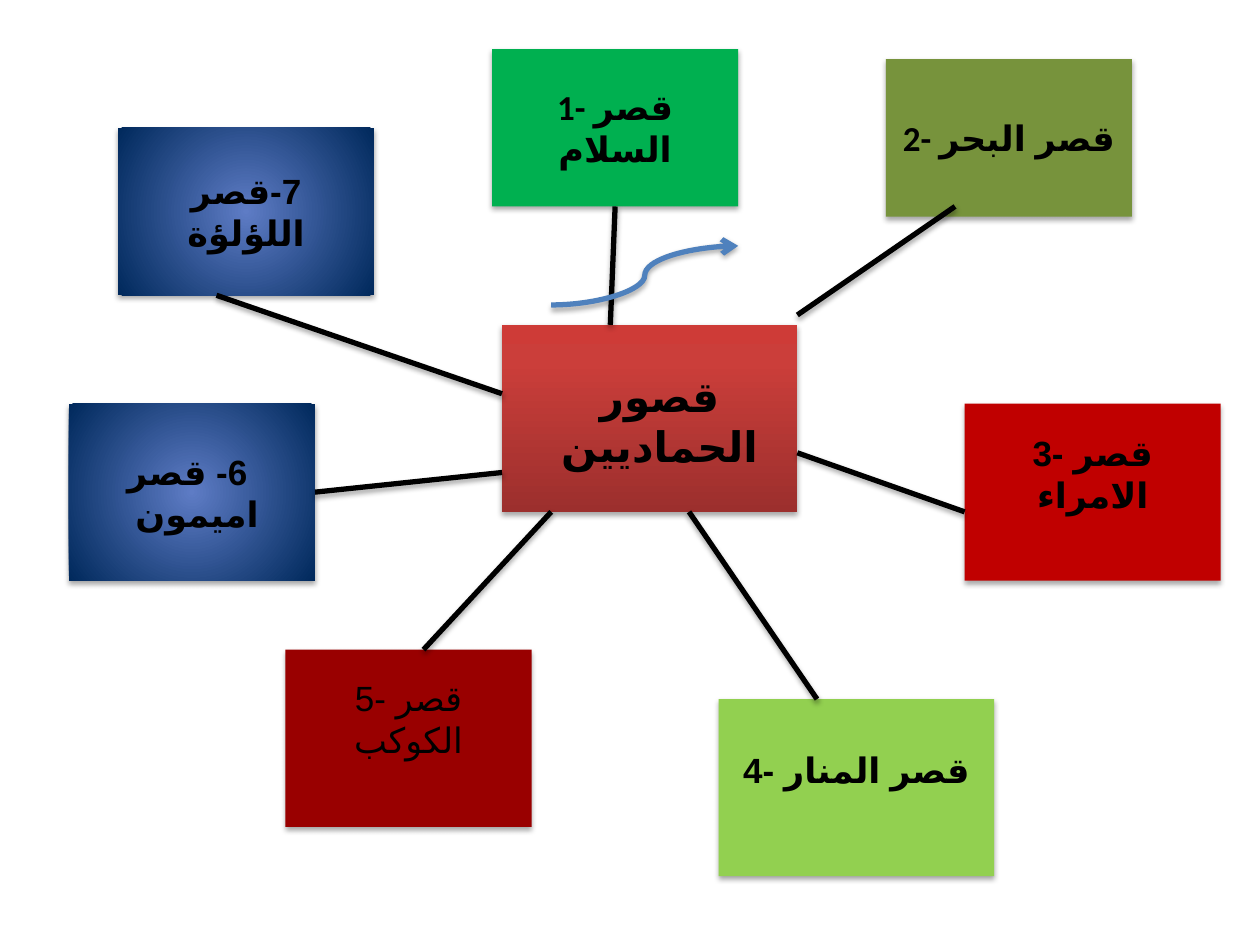
from dataclasses import dataclass

from lxml.etree import SubElement
from pptx import Presentation
from pptx.dml.color import RGBColor
from pptx.enum.shapes import MSO_CONNECTOR, MSO_SHAPE
from pptx.enum.text import MSO_ANCHOR, PP_ALIGN
from pptx.oxml.ns import qn
from pptx.util import Pt


@dataclass(frozen=True)
class Gradient:
    """Stops are (percent, colour); without an angle the gradient is radial."""
    stops: tuple[tuple[int, str], ...]
    angle: int | None = None


@dataclass(frozen=True)
class Theme:
    ink: str = "000000"
    arrow: str = "4F81BD"
    hub: Gradient = Gradient(((0, "9C2F2D"), (80, "CB3E3A"), (100, "CE3B37")), 270)
    blue: Gradient = Gradient(((0, "5E7CC5"), (100, "00295C")))
    arabic_font: str = "Arial"
    language: str = "ar-DZ"
    hub_size: float = 24
    palace_size: float = 20
    line_width: float = 3


@dataclass(frozen=True)
class Box:
    left: float
    top: float
    width: float
    height: float

    def lengths(self) -> tuple[Pt, Pt, Pt, Pt]:
        return Pt(self.left), Pt(self.top), Pt(self.width), Pt(self.height)


@dataclass(frozen=True)
class Palace:
    label: str
    box: Box
    fill: str | Gradient
    font: str = "Arial"
    bold: bool = True
    rtl: bool = False
    lift: float = 0  # extra bottom inset that raises the label


@dataclass(frozen=True)
class Link:
    start: tuple[float, float]
    end: tuple[float, float]


THEME = Theme()
HUB = Box(286.88, 185.63, 168.75, 106.88)
HUB_LABEL = Box(303.75, 208, 146.25, 36)
PALACES = [
    Palace("1- قصر السلام", Box(281.25, 28, 140.5, 90), "00B050", "Calibri"),
    Palace("2- قصر البحر", Box(506.25, 33.75, 140.5, 90), "77933C", "Calibri"),
    Palace("3- قصر الامراء", Box(551.25, 230.63, 146.25, 101.25), "C00000", lift=21),
    Palace("4- قصر المنار", Box(410.63, 399.5, 157.5, 101.25), "92D050", lift=21),
    Palace("5- قصر الكوكب", Box(163.13, 371.25, 140.63, 101.25), "990000", bold=False, lift=23),
    Palace(" 6- قصر اميمون ", Box(39.4, 230.63, 140.63, 101.25), THEME.blue, rtl=True),
    Palace("7-قصر اللؤلؤة", Box(67.5, 73, 146.25, 95.75), THEME.blue, rtl=True),
]
LINKS = [
    Link((348.75, 185.63), (351.5, 118)),
    Link((545.75, 118), (455.63, 180)),
    Link((123.75, 168.75), (286.88, 225)),
    Link((286.88, 270), (180, 281.25)),
    Link((315, 292.5), (242, 371.25)),
    Link((393.75, 292.5), (466.88, 399.5)),
    Link((455.63, 258.75), (551.25, 292.5)),
]
ORDER_ARROW = Link((315, 174.25), (421.88, 140.5))


def add_node(parent, tag: str, **attributes):
    node = SubElement(parent, qn(tag))
    for name, value in attributes.items():
        node.set(name, str(value))
    return node


def add_shadow(shape) -> None:
    """Soft shadow just below the shape; line and fill must already be set."""
    properties = shape.element.spPr
    effects = properties.find(qn("a:effectLst"))
    if effects is None:
        effects = add_node(properties, "a:effectLst")
    shadow = add_node(effects, "a:outerShdw", blurRad=Pt(3.1), dist=Pt(1.8),
                      dir=90 * 60000, rotWithShape=0)
    colour = add_node(shadow, "a:srgbClr", val=THEME.ink)
    add_node(colour, "a:alpha", val=35000)


def fill_gradient(shape, gradient: Gradient) -> None:
    shape.fill.gradient()
    fill = shape.element.spPr.find(qn("a:gradFill"))
    for child in list(fill):
        fill.remove(child)
    stops = add_node(fill, "a:gsLst")
    for percent, colour in gradient.stops:
        stop = add_node(stops, "a:gs", pos=percent * 1000)
        add_node(stop, "a:srgbClr", val=colour)
    if gradient.angle is None:
        radial = add_node(fill, "a:path", path="circle")
        add_node(radial, "a:fillToRect", l=50000, t=50000, r=50000, b=50000)
    else:
        add_node(fill, "a:lin", ang=gradient.angle * 60000, scaled=0)


def add_block(slide, box: Box, fill: str | Gradient):
    block = slide.shapes.add_shape(MSO_SHAPE.RECTANGLE, *box.lengths())
    if isinstance(fill, Gradient):
        fill_gradient(block, fill)
    else:
        block.fill.solid()
        block.fill.fore_color.rgb = RGBColor.from_string(fill)
    block.line.fill.background()
    block.shadow.inherit = False
    add_shadow(block)
    return block


def write_label(frame, label: str, font: str, size: float,
                bold: bool = True, rtl: bool = False) -> None:
    frame.word_wrap = True
    paragraph = frame.paragraphs[0]
    paragraph.alignment = PP_ALIGN.CENTER
    if rtl:
        paragraph._p.get_or_add_pPr().set("rtl", "1")
    run = paragraph.add_run()
    run.text = label
    for name, value in {"name": font, "size": Pt(size), "bold": bold}.items():
        setattr(run.font, name, value)
    run.font.color.rgb = RGBColor.from_string(THEME.ink)
    properties = run._r.get_or_add_rPr()
    properties.set("lang", THEME.language)
    add_node(properties, "a:cs", typeface=THEME.arabic_font)


def add_palace(slide, palace: Palace) -> None:
    frame = add_block(slide, palace.box, palace.fill).text_frame
    frame.vertical_anchor = MSO_ANCHOR.MIDDLE
    frame.margin_bottom = Pt(3.6 + palace.lift)
    write_label(frame, palace.label, palace.font, THEME.palace_size, palace.bold, palace.rtl)


def add_link(slide, link: Link, colour: str, kind=MSO_CONNECTOR.STRAIGHT, arrow: bool = False) -> None:
    connector = slide.shapes.add_connector(kind, *map(Pt, link.start + link.end))
    connector.line.width = Pt(THEME.line_width)
    connector.line.color.rgb = RGBColor.from_string(colour)
    if arrow:
        add_node(connector.element.spPr.find(qn("a:ln")), "a:tailEnd", type="arrow")
    add_shadow(connector)


def main() -> None:
    deck = Presentation()
    deck.slide_width, deck.slide_height = Pt(720), Pt(540)
    slide = deck.slides.add_slide(deck.slide_layouts.get_by_name("Blank"))

    add_block(slide, HUB, THEME.hub)
    hub_label = slide.shapes.add_textbox(*HUB_LABEL.lengths())
    write_label(hub_label.text_frame, "قصور الحماديين", "Calibri", THEME.hub_size)
    for palace in PALACES:
        add_palace(slide, palace)
    for link in LINKS:
        add_link(slide, link, THEME.ink)
    add_link(slide, ORDER_ARROW, THEME.arrow, MSO_CONNECTOR.CURVE, arrow=True)

    deck.save("out.pptx")


if __name__ == "__main__":
    main()
